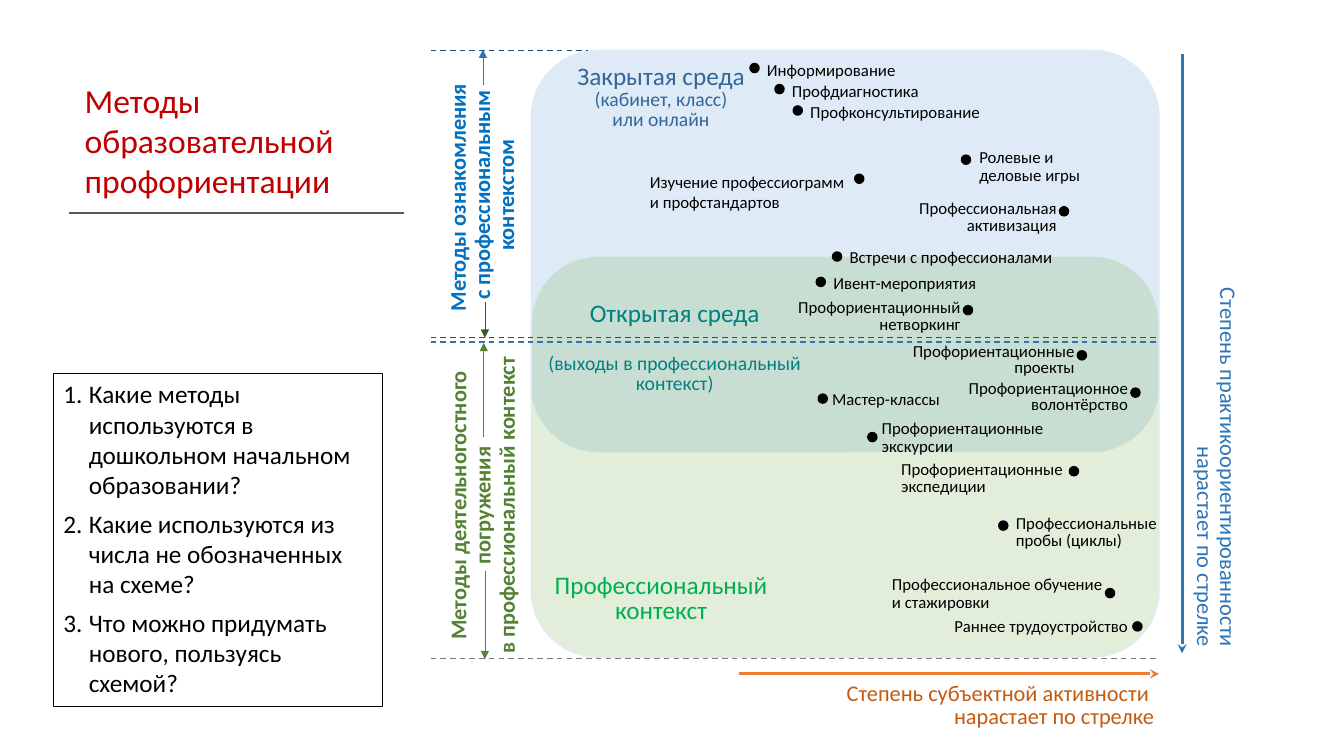
"""Build the slide that maps career guidance methods by setting and activity."""
from lxml import etree
from pptx import Presentation, util as u
from pptx.dml.color import RGBColor
from pptx.enum import dml, shapes, text
from pptx.oxml.ns import qn

THEME = {
    "font": "Calibri",
    "title": 24, "head": 18, "axis": 16, "sub": 14, "label": 12,
    "red": "C00000", "black": "000000", "grey": "595959", "ash": "7C7C7C",
    "pale": "DEEBF7", "leaf": "70AD47", "steel": "336699", "teal": "008080",
    "green": "00B050", "blue": "0070C0", "moss": "548235", "pine": "385723",
    "navy": "1F4E79", "sky": "2E75B6", "orange": "ED7D31", "rust": "C55A11",
}
LEFT, MID, RIGHT = (text.PP_ALIGN.LEFT, text.PP_ALIGN.CENTER, text.PP_ALIGN.RIGHT)
DOT = 0.23

TITLE = "Методы\nобразовательной\nпрофориентации"
TASKS = [
    "Какие методы используются в дошкольном начальном образовании?",
    "Какие используются из числа не обозначенных на схеме?",
    "Что можно придумать нового, пользуясь схемой?",
]

# box, turn, colour, bold, align, spacing, wrap, paragraphs
NOTES = [
    ((14.27, 1.5, 4.78, 1.93), 0, "steel", False, MID, 0.85, False,
     [("Закрытая среда", "head"), ("(кабинет, класс)\nили онлайн", "sub")]),
    ((13.69, 14.33, 5.94, 1.57), 0, "green", False, MID, 0.85, False,
     [("Профессиональный\nконтекст", "head")]),
    ((13.54, 7.49, 6.93, 2.59), 0, "teal", False, MID, 0.85, False,
     [("Открытая среда", "head"),
      ("(выходы в профессиональный\nконтекст)", "sub", 18.7)]),
    ((20.98, 17.09, 8.36, 1.42), 0, "rust", False, RIGHT, 0.85, False,
     [("Степень субъектной активности \nнарастает по стрелке", "axis")]),
    ((8.92, 3.86, 6.53, 2.11), 270, "blue", True, MID, 0.9, True,
     [("Методы ознакомления \nс профессиональным контекстом", "axis")]),
    ((8.1, 11.68, 8.2, 2.11), 270, "moss", True, MID, 0.9, False,
     [("Методы деятельногостного\n погружения \nв профессиональный контекст", "axis")]),
    ((25.78, 11, 9.68, 1.42), 90, "sky", False, RIGHT, 0.85, False,
     [("Степень практикоориентированности\nнарастает по стрелке", "axis")]),
]

# text, dot x, dot y, label on the left, gap, rise, width, lines, spacing, align, wrap
METHODS = [
    ("Информирование", 18.9, 1.6, 0, 0.18, 0.23, 3.78, 1, 1, LEFT, False),
    ("Профдиагностика", 19.53, 2.13, 0, 0.18, 0.23, 3.73, 1, 1, LEFT, False),
    ("Профконсультирование", 19.99, 2.67, 0, 0.18, 0.23, 4.83, 1, 1, LEFT, False),
    ("Ролевые и деловые игры", 24.23, 3.91, 0, 0.2, 0.25, 3.56, 2, 0.85, LEFT, True),
    ("Изучение профессиограмм\nи профстандартов",
     21.54, 4.39, 1, 0.05, 0.18, 5.46, 2, 1, LEFT, False),
    ("Профессиональная активизация", 26.7, 5.21, 1, 0.18, 0.28, 4.85, 2, 0.85, RIGHT, True),
    ("Встречи с профессионалами", 20.98, 6.35, 0, 0.18, 0.25, 5.69, 1, 1, LEFT, False),
    ("Ивент-мероприятия", 20.57, 6.99, 0, 0.18, 0.25, 4.17, 1, 1, LEFT, False),
    ("Профориентационный нетворкинг", 24.28, 7.7, 1, 0.18, 0.28, 4.85, 2, 0.85, RIGHT, True),
    ("Профориентационные проекты", 27.15, 8.84, 1, 0.18, 0.28, 4.85, 2, 0.8, RIGHT, True),
    ("Профориентационное волонтёрство", 28.5, 9.78, 1, 0.18, 0.28, 4.85, 2, 0.8, RIGHT, True),
    ("Мастер-классы", 20.62, 9.93, 0, 0.1, 0.25, 4.85, 1, 1, LEFT, True),
    ("Профориентационные экскурсии", 21.87, 10.9, 0, 0.1, 0.41, 4.85, 2, 0.85, LEFT, True),
    ("Профориентационные экспедиции", 26.95, 11.76, 1, 0.36, 0.25, 4.85, 2, 0.85, LEFT, True),
    ("Профессиональные\nпробы (циклы)", 25.17, 13.13, 0, 0.18, 0.25, 4.11, 2, 0.85, LEFT, False),
    ("Профессиональное обучение\nи стажировки",
     27.86, 14.83, 1, 0.36, 0.41, 5.99, 2, 0.85, LEFT, False),
    ("Раннее трудоустройство", 28.55, 15.67, 1, 0.18, 0.2, 4.93, 1, 0.85, LEFT, False),
]

# from x, from y, to x, to y, colour, width, dashed, arrowhead
LINES = [
    (18.62, 16.98, 29.21, 16.98, "orange", 2.25, False, "stealth"),
    (29.79, 1.37, 29.79, 16.46, "sky", 2.25, False, "stealth"),
    (10.85, 1.27, 14.83, 1.27, "navy", 1, True, None),
    (10.85, 8.5, 29.21, 8.5, "navy", 1, True, None),
    (10.85, 8.62, 29.21, 8.62, "sky", 1, True, None),
    (10.85, 16.6, 29.21, 16.6, "ash", 1, True, None),
    (12.17, 2.13, 12.17, 1.25, "sky", 0.5, False, "triangle"),
    (12.22, 7.62, 12.22, 8.51, "pine", 0.5, False, "triangle"),
    (12.19, 11, 12.19, 8.64, "moss", 0.5, False, "triangle"),
    (12.22, 14.38, 12.22, 16.61, "moss", 0.5, False, "triangle"),
    (1.75, 5.37, 10.19, 5.37, "grey", 1.5, False, None),
]


def tint(name):
    return RGBColor.from_string(THEME[name])


def put(item, **vals):
    for key, val in vals.items():
        setattr(item, key, val)


def cms(vals):
    return [u.Cm(val) for val in vals]


def write(frame, paras, hue, wrap=False, bold=False, **form):
    put(frame, word_wrap=wrap, auto_size=text.MSO_AUTO_SIZE.SHAPE_TO_FIT_TEXT,
        vertical_anchor=text.MSO_ANCHOR.TOP)
    for i, (words, size, *gap) in enumerate(paras):
        para = frame.add_paragraph() if i else frame.paragraphs[0]
        para.text = words
        put(para, **form)
        if gap:
            para.space_before = u.Pt(gap[0])
        for run in para.runs:
            put(run.font, name=THEME["font"], size=u.Pt(THEME[size]), bold=bold)
            run.font.color.rgb = tint(hue)
        for br in para._p.findall(qn("a:br")):
            etree.SubElement(br, qn("a:rPr"), sz=str(THEME[size] * 100))


def note(slide, box, paras, hue, turn=0, **form):
    item = slide.shapes.add_textbox(*cms(box))
    item.rotation = turn
    write(item.text_frame, paras, hue, **form)
    return item


def solid(slide, kind, box, fill, edge):
    item = slide.shapes.add_shape(kind, *cms(box))
    item.shadow.inherit = False
    item.fill.solid()
    item.fill.fore_color.rgb = tint(fill)
    item.line.color.rgb = tint(edge)
    item.line.width = u.Pt(1)
    return item


def rule(slide, ends, hue, width, dash, head):
    item = slide.shapes.add_connector(shapes.MSO_CONNECTOR.STRAIGHT, *cms(ends))
    item.line.color.rgb = tint(hue)
    item.line.width = u.Pt(width)
    if dash:
        item.line.dash_style = dml.MSO_LINE.DASH
    if head:
        etree.SubElement(item.line._get_or_add_ln(), qn("a:tailEnd"), type=head)
    etree.SubElement(item._element.spPr, qn("a:effectLst"))


def tasks(slide):
    item = note(slide, (1.35, 9.42, 8.28, 8.38), [(task, "head") for task in TASKS],
                "black", wrap=True, space_after=u.Pt(6))
    item.line.color.rgb = tint("black")
    item.line.width = u.Pt(0.75)
    hang = u.Cm(0.64)
    for para in item.text_frame.paragraphs:
        props = para._p.get_or_add_pPr()
        props.set("marL", str(hang))
        props.set("indent", str(-hang))
        etree.SubElement(props, qn("a:buFont"), typeface="+mj-lt")
        etree.SubElement(props, qn("a:buAutoNum"), type="arabicPeriod")


def main():
    deck = Presentation()
    put(deck, slide_width=u.Cm(33.87), slide_height=u.Cm(19.05))
    slide = deck.slides.add_slide(deck.slide_layouts[5])

    for top, fill in ((1.27, "pale"), (6.45, "leaf")):
        zone = solid(slide, shapes.MSO_SHAPE.ROUNDED_RECTANGLE,
                     (13.39, top, 15.82, 10.11), fill, "pale")
    shade = zone._element.spPr.find(qn("a:solidFill"))[0]
    etree.SubElement(shade, qn("a:alpha"), val="20000")

    for box, turn, hue, bold, align, pitch, wrap, paras in NOTES:
        note(slide, box, paras, hue, turn, wrap=wrap, bold=bold,
             alignment=align, line_spacing=pitch)
    for words, x, y, side, gap, rise, wide, rows, pitch, align, wrap in METHODS:
        solid(slide, shapes.MSO_SHAPE.OVAL, (x, y, DOT, DOT), "black", "black")
        high = 0.25 + rows * pitch * 0.52
        note(slide, (x + gap - side * wide, y - rise, wide, high), [(words, "label")],
             "black", wrap=wrap, alignment=align, line_spacing=pitch)
    for *ends, hue, width, dash, head in LINES:
        rule(slide, ends, hue, width, dash, head)

    title = slide.shapes.title
    put(title, **dict(zip(("left", "top", "width", "height"), cms((1.88, 1.88, 6.86, 3.33)))))
    write(title.text_frame, [(TITLE, "title")], "red", alignment=LEFT)
    tasks(slide)
    deck.save("out.pptx")


if __name__ == "__main__":
    main()
